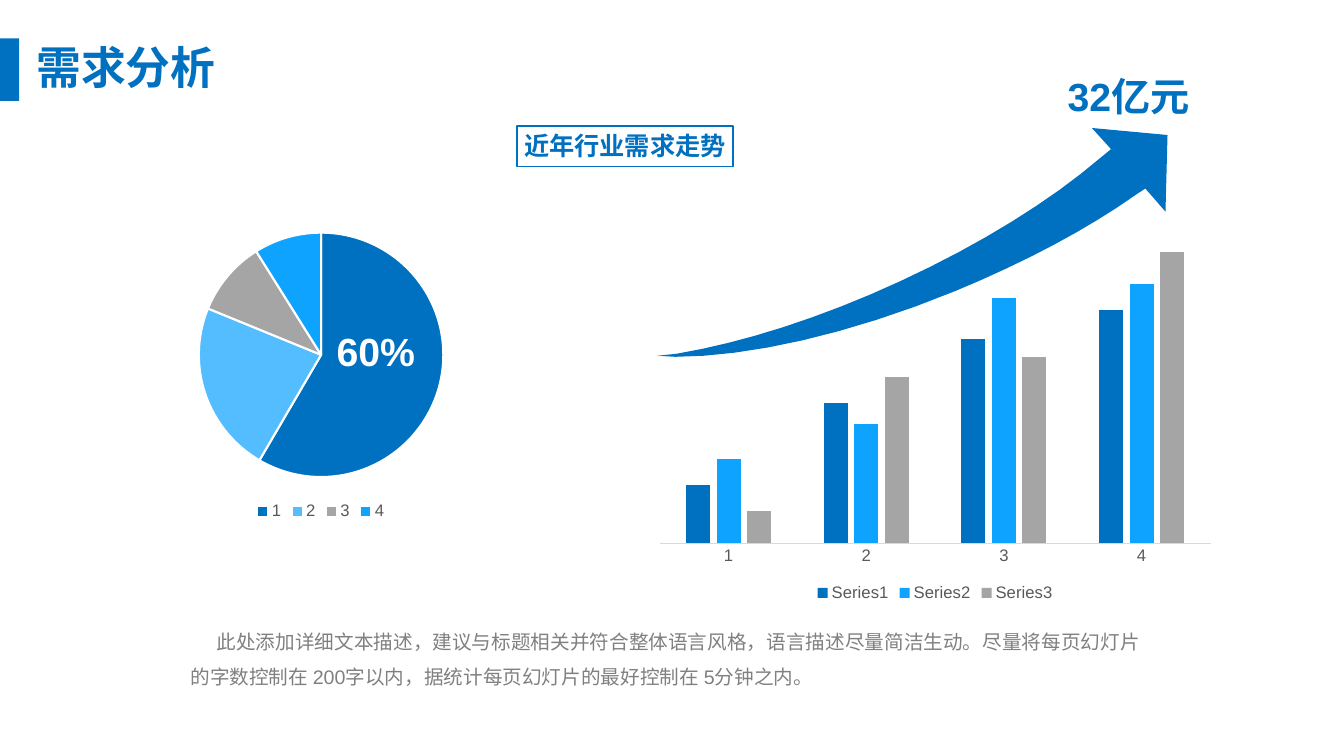
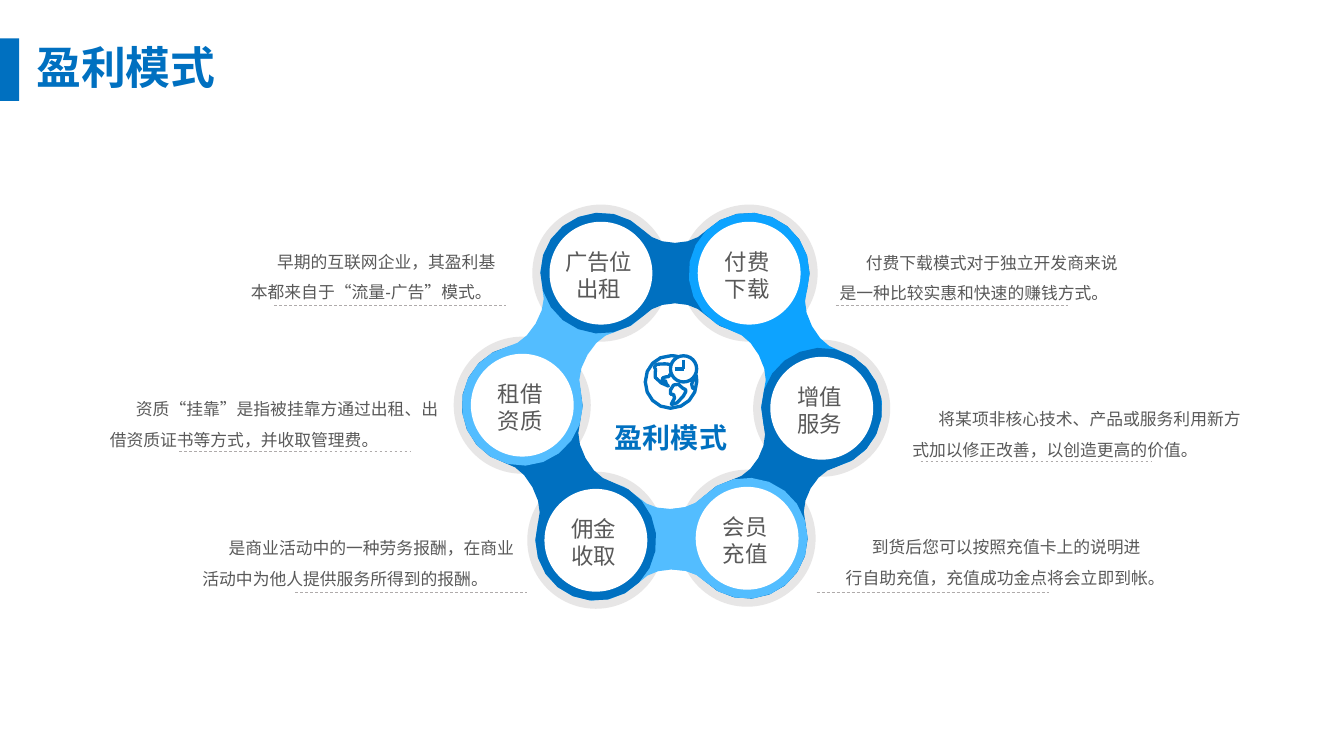
"""Build a two-slide business deck: demand analysis and profit model."""
from dataclasses import dataclass
from math import atan2, cos, dist, radians, sin

from lxml.etree import SubElement
from pptx import Presentation
from pptx.chart.data import CategoryChartData
from pptx.dml.color import RGBColor
from pptx.enum.chart import XL_CHART_TYPE as ChartType, XL_LEGEND_POSITION as LegendPosition
from pptx.enum.chart import XL_TICK_MARK as TickMark
from pptx.enum.dml import MSO_LINE as Dash
from pptx.enum.shapes import MSO_CONNECTOR as Connector, MSO_SHAPE as Preset
from pptx.enum.text import MSO_AUTO_SIZE as AutoSize, PP_ALIGN as Align
from pptx.oxml.ns import qn
from pptx.util import Inches, Pt


@dataclass(frozen=True)
class Theme:
    """Colours, font and type sizes of the deck."""
    blue: str = "0070C0"
    bright: str = "0DA3FF"
    light: str = "53BDFF"
    grey: str = "A5A5A5"
    halo: str = "E7E6E6"
    rule: str = "AFABAB"
    axis: str = "D9D9D9"
    ink: str = "595959"
    soft: str = "808080"
    white: str = "FFFFFF"
    font: str = "Arial"
    title: float = 32
    figure: float = 28
    hub: float = 20
    heading: float = 18
    node: float = 16
    body: float = 14
    caption: float = 12
    chart: float = 11.9


THEME = Theme()
COLUMNS, ROWS = 13.33, 7.5
FIRST_LINE = 0.26
HALO_RADIUS, LINK_RADIUS, DISC_RADIUS = 0.68, 0.6, 0.51
WAIST, CAP_ANGLE, CAP_STEP = 0.3, 136, 17
ICON_WEIGHT = 2.38

GROWTH_ARROW = (
    (11.58, 1.34), (11.56, 2.1), (11.36, 1.87), (11.27, 1.93),
    (10.79, 2.27, 10.17, 2.6, 9.47, 2.89), (8.42, 3.32, 7.42, 3.54, 6.7, 3.54),
    (6.52, 3.53), (6.71, 3.51), (7.36, 3.4, 8.13, 3.16, 8.93, 2.79),
    (9.73, 2.42, 10.42, 1.99, 10.91, 1.57), (11.02, 1.48), (10.83, 1.27))

GLOBE_RIM = (
    (6.73, 3.54), (6.7, 3.53, 6.68, 3.53, 6.65, 3.53), (6.51, 3.53, 6.4, 3.64, 6.4, 3.79),
    (6.4, 3.93, 6.51, 4.05, 6.65, 4.05), (6.8, 4.05, 6.91, 3.93, 6.91, 3.79),
    (6.91, 3.76, 6.91, 3.74, 6.9, 3.71))
WEST_LAND = (
    (6.65, 3.62), (6.63, 3.61, 6.61, 3.61, 6.59, 3.61), (6.54, 3.6, 6.47, 3.62, 6.49, 3.64),
    (6.51, 3.65, 6.5, 3.68, 6.5, 3.69), (6.49, 3.72, 6.49, 3.77, 6.56, 3.8),
    (6.63, 3.83), (6.62, 3.82), (6.61, 3.81), (6.6, 3.78),
    (6.6, 3.77, 6.59, 3.8, 6.57, 3.78), (6.56, 3.75, 6.58, 3.74, 6.6, 3.74),
    (6.63, 3.75, 6.64, 3.73, 6.65, 3.71))
SOUTH_LAND = (
    (6.65, 3.87), (6.65, 3.91), (6.68, 3.94, 6.69, 3.88, 6.69, 3.95),
    (6.68, 4.02, 6.62, 4.02, 6.67, 4.01), (6.72, 3.99, 6.71, 4.01, 6.74, 3.97),
    (6.78, 3.94, 6.78, 3.92, 6.8, 3.89), (6.82, 3.86, 6.79, 3.87, 6.77, 3.85),
    (6.75, 3.83, 6.71, 3.78, 6.68, 3.82))
EAST_LAND = ((6.88, 3.75), (6.88, 3.77), (6.87, 3.79, 6.84, 3.83, 6.87, 3.85), (6.9, 3.86))

RING = (
    ((7.41, 5.34), THEME.light, ("会员", "充值")),
    ((5.91, 5.36), THEME.blue, ("佣金", "收取")),
    ((5.18, 4.02), THEME.light, ("租借", "资质")),
    ((5.96, 2.71), THEME.blue, ("广告位出租",)),
    ((7.43, 2.71), THEME.bright, ("付费", "下载")),
    ((8.15, 4.05), THEME.blue, ("增值", "服务")))

CAPTIONS = (
    (2.72, 3.03, (2.39, 2.35, 2.74), "早期的互联网企业，其盈利基本都来自于“流量-广告”模式。"),
    (8.29, 3.03, (8.23, 2.36, 3.04), "付费下载模式对于独立开发商来说是一种比较实惠和快速的赚钱方式。"),
    (9.13, 4.58, (8.95, 3.91, 3.47),
     "将某项非核心技术、产品或服务利用新方式加以修正改善，以创造更高的价值。"),
    (1.78, 4.48, (0.99, 3.81, 3.48),
     "资质“挂靠”是指被挂靠方通过出租、出借资质证书等方式，并收取管理费。"),
    (2.93, 5.88, (1.91, 5.19, 3.33),
     "是商业活动中的一种劳务报酬，在商业活动中为他人提供服务所得到的报酬。"),
    (8.1, 5.88, (8.29, 5.18, 3.26),
     "到货后您可以按照充值卡上的说明进行自助充值，充值成功金点将会立即到帐。"))

DEMAND = (
    ("Series1", (20, 48, 70, 80), THEME.blue),
    ("Series2", (29, 41, 84, 89), THEME.bright),
    ("Series3", (11, 57, 64, 100), THEME.grey))


def rgb(colour):
    """Turn a hex string into a colour."""
    return RGBColor.from_string(colour)


def cells(*counts):
    """Turn counts of one-inch grid columns or rows into lengths."""
    return [Inches(count) for count in counts]


def paint(shape, fill=None, stroke=None, weight=1):
    """Set the fill and outline of a shape and drop its shadow."""
    shape.shadow.inherit = False
    if fill:
        shape.fill.solid()
        shape.fill.fore_color.rgb = rgb(fill)
    else:
        shape.fill.background()
    if stroke:
        shape.line.color.rgb = rgb(stroke)
        shape.line.width = Pt(weight)
    else:
        shape.line.fill.background()


def write(slide, area, lines, size, colour, bold=False, align=Align.LEFT, spacing=None, indent=0):
    """Place a text box with one paragraph per line."""
    box = slide.shapes.add_textbox(*cells(*area))
    frame = box.text_frame
    frame.word_wrap = True
    frame.auto_size = AutoSize.SHAPE_TO_FIT_TEXT
    for number, line in enumerate(lines):
        paragraph = frame.add_paragraph() if number else frame.paragraphs[0]
        paragraph.alignment = align
        if spacing:
            paragraph.line_spacing = spacing
        if indent:
            paragraph._p.get_or_add_pPr().set("indent", str(Inches(indent)))
        run = paragraph.add_run()
        run.text = line
        run.font.name = THEME.font
        run.font.size = Pt(size)
        run.font.bold = bold
        run.font.color.rgb = rgb(colour)


def block(slide, area, preset=Preset.RECTANGLE, **look):
    """Place a preset shape."""
    paint(slide.shapes.add_shape(preset, *cells(*area)), **look)


def disc(slide, centre, radius, **look):
    """Place a circle around a centre."""
    x, y = centre
    block(slide, (x - radius, y - radius, 2 * radius, 2 * radius), Preset.OVAL, **look)


def rule(slide, start, end, colour, weight, dash=None):
    """Draw a straight line."""
    line = slide.shapes.add_connector(Connector.STRAIGHT, *cells(*start, *end))
    line.line.color.rgb = rgb(colour)
    line.line.width = Pt(weight)
    if dash:
        line.line.dash_style = dash
    SubElement(line._element.spPr, qn("a:effectLst"))


def flatten(outline, steps):
    """Turn an outline of points and Bezier curves into points."""
    points = [outline[0]]
    for step in outline[1:]:
        if len(step) == 2:
            points.append(step)
            continue
        knots = (points[-1], step[:2], step[2:4], step[4:])
        for t in (count / steps for count in range(1, steps + 1)):
            weights = ((1 - t) ** 3, 3 * t * (1 - t) ** 2, 3 * t * t * (1 - t), t ** 3)
            points.append(tuple(sum(w * knot[axis] for w, knot in zip(weights, knots))
                                for axis in (0, 1)))
    return points


def outline_shape(slide, points, close=True, **look):
    """Draw a freeform through points."""
    first, *rest = [cells(*point) for point in points]
    builder = slide.shapes.build_freeform(*first, scale=1.0)
    builder.add_line_segments(rest, close=close)
    paint(builder.convert_to_shape(), **look)


def link(slide, start, end, colour, half=False):
    """Draw two round caps joined by a narrow neck, or only the start half."""
    reach = dist(start, end) / 2
    cap = [(reach + LINK_RADIUS * cos(radians(a)), LINK_RADIUS * sin(radians(a)))
           for a in range(-CAP_ANGLE, CAP_ANGLE + 1, CAP_STEP)]
    joint = cap[-1]
    neck = flatten((joint, (joint[0] - 0.06, 0.35, joint[0] - 0.17, WAIST, 0, WAIST)), 3)[1:]
    side = [(x, -y) for x, y in reversed(neck)] + cap + neck
    if not half:
        side += [(-x, -y) for x, y in side[1:-1]]
    turn = atan2(start[1] - end[1], start[0] - end[0])
    middle_x, middle_y = ((a + b) / 2 for a, b in zip(start, end))
    outline_shape(slide, [(middle_x + x * cos(turn) - y * sin(turn),
                           middle_y + x * sin(turn) + y * cos(turn)) for x, y in side], fill=colour)


def chart(slide, area, kind, series):
    """Place a chart with a bottom legend and return it."""
    data = CategoryChartData()
    data.categories = ["1", "2", "3", "4"]
    for name, values in series:
        data.add_series(name, values)
    figure = slide.shapes.add_chart(kind, *cells(*area), data).chart
    figure.has_title = False
    figure.has_legend = True
    figure.legend.position = LegendPosition.BOTTOM
    figure.legend.include_in_layout = False
    figure.font.name = THEME.font
    figure.font.size = Pt(THEME.chart)
    figure.font.color.rgb = rgb(THEME.ink)
    return figure


def share_pie(slide):
    """Draw the pie of market shares."""
    pie = chart(slide, (0.91, 2.17, 4.55, 3.03), ChartType.PIE, [("Series 1", (59, 23, 10, 9))])
    slices = pie.plots[0].series[0].points
    for number, colour in enumerate((THEME.blue, THEME.light, THEME.grey, THEME.bright)):
        look = slices[number].format
        look.fill.solid()
        look.fill.fore_color.rgb = rgb(colour)
        look.line.color.rgb = rgb(THEME.white)
        look.line.width = Pt(1.5)


def demand_columns(slide):
    """Draw the columns of yearly demand."""
    columns = chart(slide, (6.43, 2.22, 5.69, 3.79), ChartType.COLUMN_CLUSTERED,
                    [(name, values) for name, values, _ in DEMAND])
    plot = columns.plots[0]
    plot.vary_by_categories = False
    plot.gap_width, plot.overlap = 219, -27
    for series, (_, _, colour) in zip(plot.series, DEMAND):
        series.format.fill.solid()
        series.format.fill.fore_color.rgb = rgb(colour)
    scale, years = columns.value_axis, columns.category_axis
    scale.minimum_scale, scale.maximum_scale = 0, 107
    scale.has_major_gridlines = False
    scale.visible = False
    years.major_tick_mark = TickMark.NONE
    years.format.line.color.rgb = rgb(THEME.axis)
    years.format.line.width = Pt(0.75)


def titled_slide(deck, title):
    """Add a blank slide with the blue tab and its title."""
    slide = deck.slides.add_slide(deck.slide_layouts[6])
    block(slide, (0, 0.38, 0.19, 0.62), fill=THEME.blue)
    write(slide, (0.02, 0.34, 2.46, 0.64), [title], THEME.title, THEME.blue, True, Align.CENTER)
    return slide


def globe_clock(slide):
    """Draw the globe with a small clock."""
    pen = {"stroke": THEME.blue, "weight": ICON_WEIGHT}
    disc(slide, (6.78, 3.66), 0.13, **pen)
    for hand in ((6.69, 3.66), (6.78, 3.57)):
        rule(slide, hand, (6.78, 3.66), THEME.blue, ICON_WEIGHT)
    outline_shape(slide, flatten(GLOBE_RIM, 4), close=False, **pen)
    for land in (WEST_LAND, SOUTH_LAND, EAST_LAND):
        outline_shape(slide, flatten(land, 2), close=land is SOUTH_LAND, **pen)


def demand_slide(deck):
    """Build the demand analysis."""
    slide = titled_slide(deck, "需求分析")
    write(slide, (5.1, 1.24, 2.31, 0.4), ["近年行业需求走势"], THEME.heading, THEME.blue, True)
    block(slide, (5.13, 1.25, 2.14, 0.4), stroke=THEME.blue)
    share_pie(slide)
    write(slide, (3.24, 3.2, 1.16, 0.57), ["60%"], THEME.figure, THEME.white, True)
    demand_columns(slide)
    outline_shape(slide, flatten(GROWTH_ARROW, 8), fill=THEME.blue)
    write(slide, (10.49, 0.67, 1.72, 0.57), ["32亿元"], THEME.figure, THEME.blue, True)
    write(slide, (1.79, 6.08, 9.75, 0.81),
          ["此处添加详细文本描述，建议与标题相关并符合整体语言风格，语言描述尽量简洁生动。"
           "尽量将每页幻灯片的字数控制在 200字以内，据统计每页幻灯片的最好控制在 5分钟之内。"],
          THEME.body, THEME.soft, spacing=1.5, indent=FIRST_LINE)


def profit_slide(deck):
    """Build the profit model ring with its captions."""
    slide = titled_slide(deck, "盈利模式")
    centres = [centre for centre, _, _ in RING]
    for centre in centres:
        disc(slide, centre, HALO_RADIUS, fill=THEME.halo)
    for (start, colour, _), end in zip(RING, centres[1:] + centres[:1]):
        link(slide, start, end, colour)
    link(slide, centres[0], centres[1], RING[0][1], half=True)
    for centre in centres:
        disc(slide, centre, DISC_RADIUS, fill=THEME.white)
    for (x, y), _, lines in RING:
        write(slide, (x - 0.55, y - 0.3, 1.06, 0.64), lines, THEME.node, THEME.ink,
              align=Align.CENTER)
    write(slide, (6, 4.12, 1.38, 0.44), ["盈利模式"], THEME.hub, THEME.blue, True)
    globe_clock(slide)
    for x, y, corner, caption in CAPTIONS:
        rule(slide, (x, y), (x + 2.3, y), THEME.rule, 0.5, Dash.DASH)
        write(slide, (*corner, 0.68), [caption], THEME.caption, THEME.ink,
              spacing=1.5, indent=FIRST_LINE)


def main():
    """Build and save the deck."""
    deck = Presentation()
    deck.slide_width, deck.slide_height = cells(COLUMNS, ROWS)
    demand_slide(deck)
    profit_slide(deck)
    deck.save("out.pptx")


if __name__ == "__main__":
    main()
